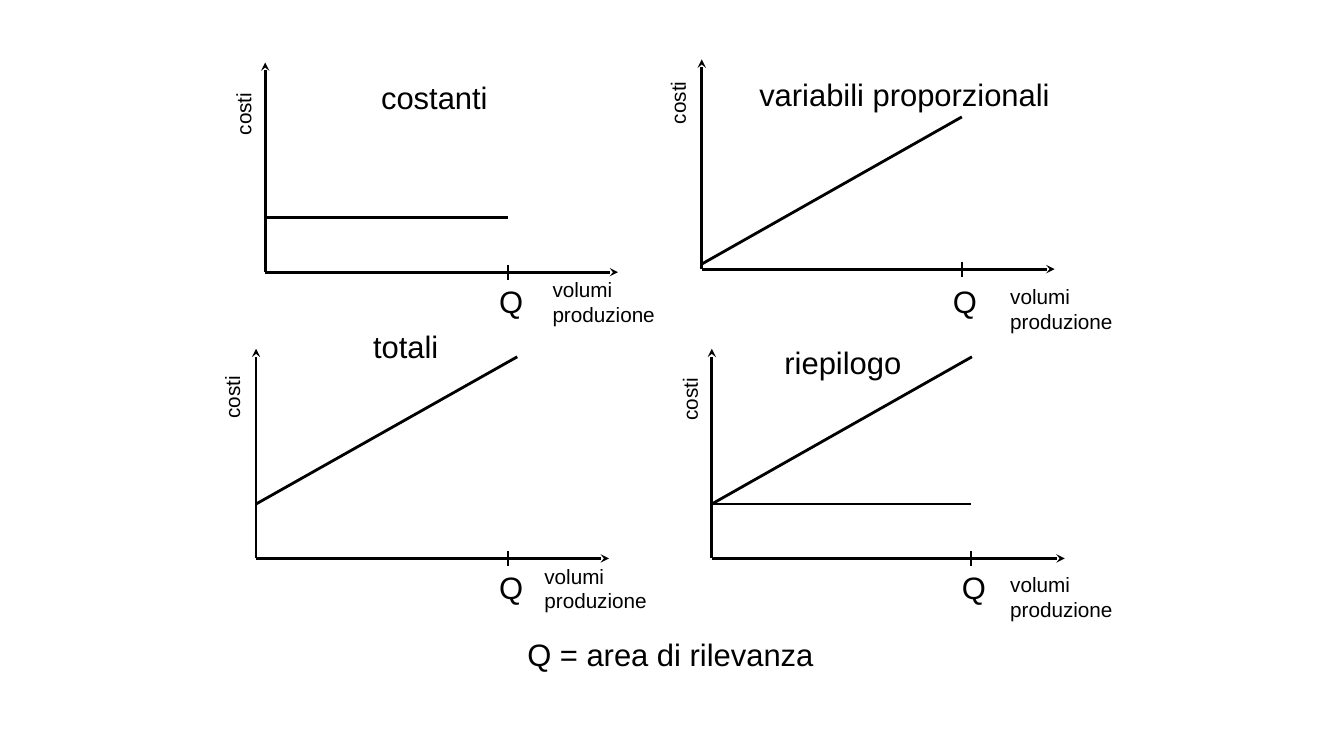
from dataclasses import dataclass

from lxml.etree import SubElement
from pptx import Presentation
from pptx.dml.color import RGBColor
from pptx.enum.shapes import MSO_CONNECTOR
from pptx.enum.text import MSO_ANCHOR, PP_ALIGN
from pptx.oxml.ns import qn
from pptx.util import Inches, Pt

COLORS = {"ink": "000000", "paper": "FFFFFF"}
FONT = "Arial"
LARGE, SMALL = 22.1, 14.8
Y_AXIS, X_AXIS = 2.08, 3.5  # axis lengths in inches
TICK = 0.15

Point = tuple[float, float]


@dataclass
class CostGraph:
    title: str
    title_at: Point
    title_width: float
    origin: Point
    cost_center: Point
    volume_at: Point
    q: float  # horizontal position of the Q mark
    q_top: float
    curves: list[tuple[Point, Point]]


GRAPHS = [
    CostGraph("costanti", (3.69, 0.73), 1.3, (2.63, 2.7), (2.41, 1.13),
              (5.39, 2.7), 5.04, 2.75, [((2.63, 2.16), (5.04, 2.16))]),
    CostGraph("variabili proporzionali", (7.44, 0.7), 3.15, (6.96, 2.67), (6.72, 1.02),
              (9.93, 2.77), 9.54, 2.75, [((6.96, 2.62), (9.54, 1.16))]),
    CostGraph("totali", (3.61, 3.2), 0.9, (2.54, 5.54), (2.3, 3.94),
              (5.31, 5.54), 5.04, 5.59, [((2.54, 5), (5.13, 3.54))]),
    CostGraph("riepilogo", (7.69, 3.36), 1.4, (7.06, 5.54), (6.84, 3.96),
              (9.93, 5.62), 9.63, 5.59,
              [((7.06, 5), (9.64, 3.54)), ((7.06, 5), (9.63, 5))]),
]


def add_line(s, start: Point, end: Point, width: float = 2, arrow: bool = False) -> None:
    line = s.shapes.add_connector(MSO_CONNECTOR.STRAIGHT, *map(Inches, start + end))
    line.line.color.rgb = RGBColor.from_string(COLORS["ink"])
    line.line.width = Pt(width)
    if arrow:
        SubElement(line.line._get_or_add_ln(), qn("a:tailEnd"), type="stealth")
    SubElement(line._element.spPr, qn("a:effectLst"))


def add_text(s, text: str, at: Point, width: float, height: float, size: float):
    sp = s.shapes.add_textbox(*map(Inches, (*at, width, height)))
    tf = sp.text_frame
    tf.word_wrap = True
    tf.margin_left = tf.margin_right = Inches(0.09)
    tf.margin_top = tf.margin_bottom = Inches(0.05)
    tf.text = text
    font = tf.paragraphs[0].runs[0].font
    font.name, font.size = FONT, Pt(size)
    font.color.rgb = RGBColor.from_string(COLORS["ink"])
    return sp


def add_cost_label(s, center: Point) -> None:
    width, height = 0.67, 0.34
    at = (center[0] - width / 2, center[1] - height / 2)
    sp = add_text(s, "costi", at, width, height, SMALL)
    sp.rotation = 270
    sp.text_frame.vertical_anchor = MSO_ANCHOR.MIDDLE
    sp.text_frame.paragraphs[0].alignment = PP_ALIGN.CENTER


def add_graph(s, graph: CostGraph) -> None:
    x, y = graph.origin
    # Axes and curves
    add_line(s, (x, y), (x, y - Y_AXIS), arrow=True)
    add_line(s, (x, y), (x + X_AXIS, y), arrow=True)
    for start, end in graph.curves:
        add_line(s, start, end)
    # Q mark
    add_line(s, (graph.q, y - TICK / 2), (graph.q, y + TICK / 2), width=1)
    add_text(s, "Q", (graph.q - 0.18, graph.q_top), 0.43, 0.47, LARGE)
    # Labels
    add_text(s, graph.title, graph.title_at, graph.title_width, 0.47, LARGE)
    add_cost_label(s, graph.cost_center)
    add_text(s, "volumi produzione", graph.volume_at, 1.3, 0.59, SMALL)


def main() -> None:
    prs = Presentation()
    prs.slide_width, prs.slide_height = Inches(13.33), Inches(7.5)
    s = prs.slides.add_slide(prs.slide_layouts[6])
    s.background.fill.solid()
    s.background.fill.fore_color.rgb = RGBColor.from_string(COLORS["paper"])

    for graph in GRAPHS:
        add_graph(s, graph)

    # Legend
    add_text(s, "Q = area di rilevanza", (5.14, 6.26), 3.1, 0.47, LARGE)
    prs.save("out.pptx")


if __name__ == "__main__":
    main()
